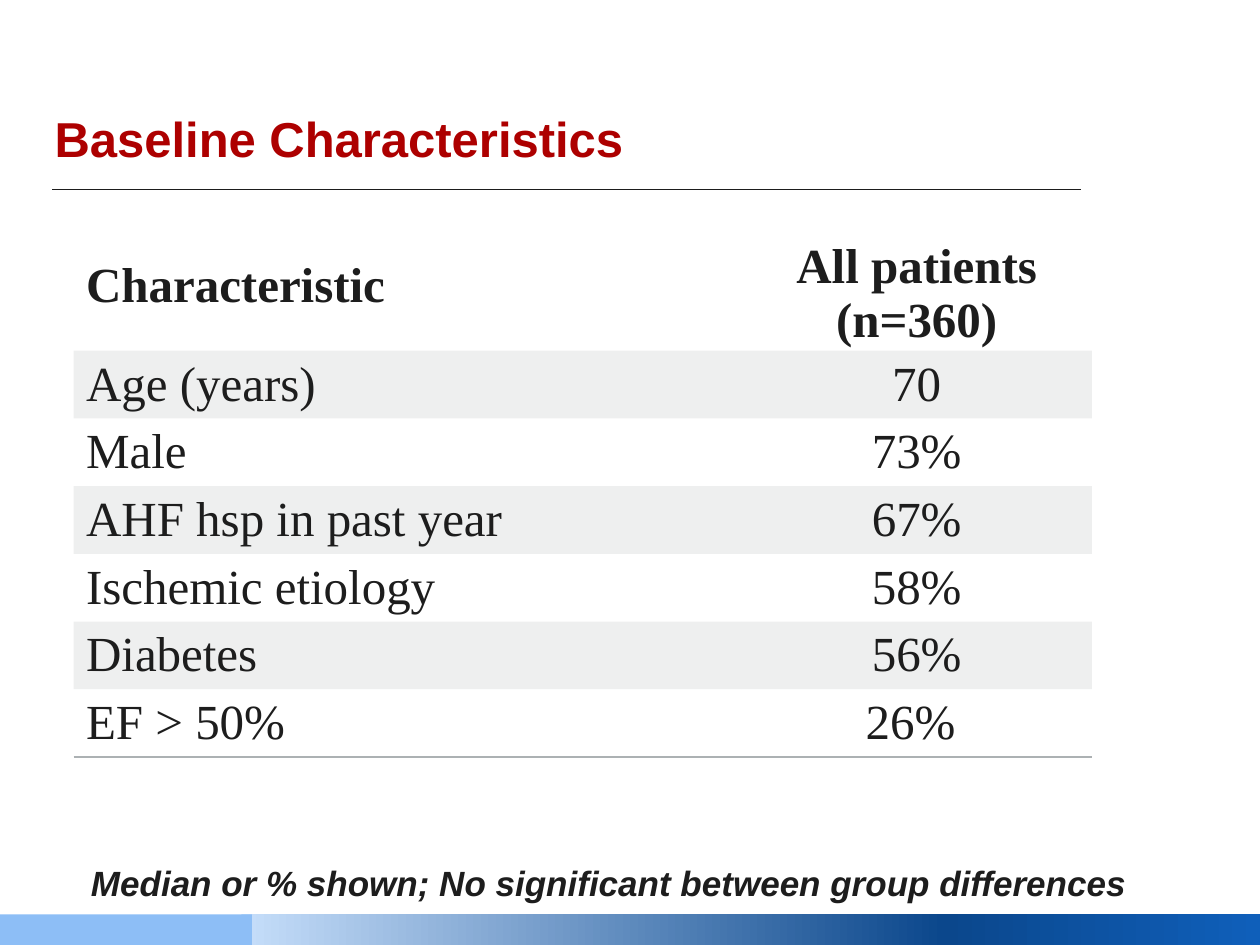
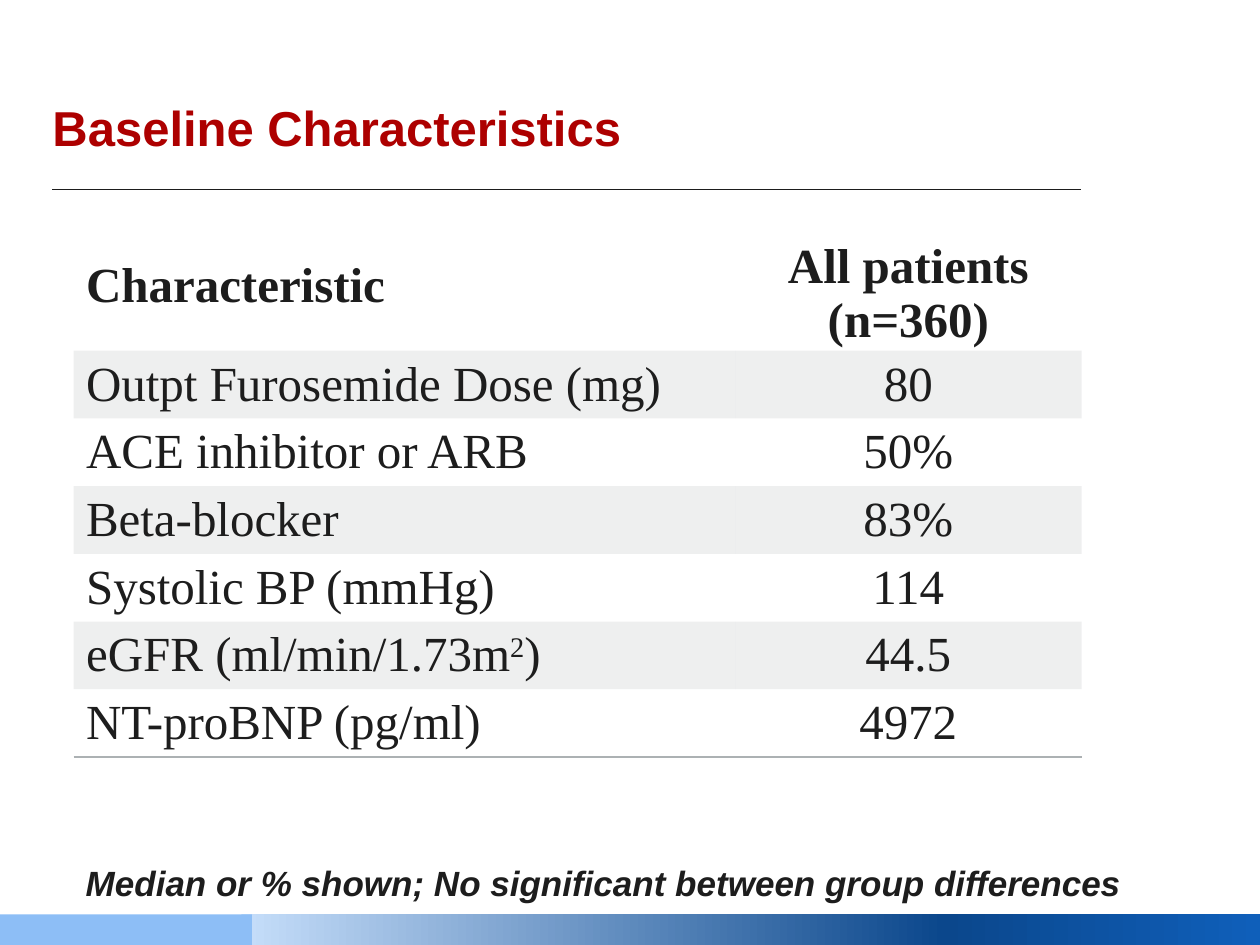
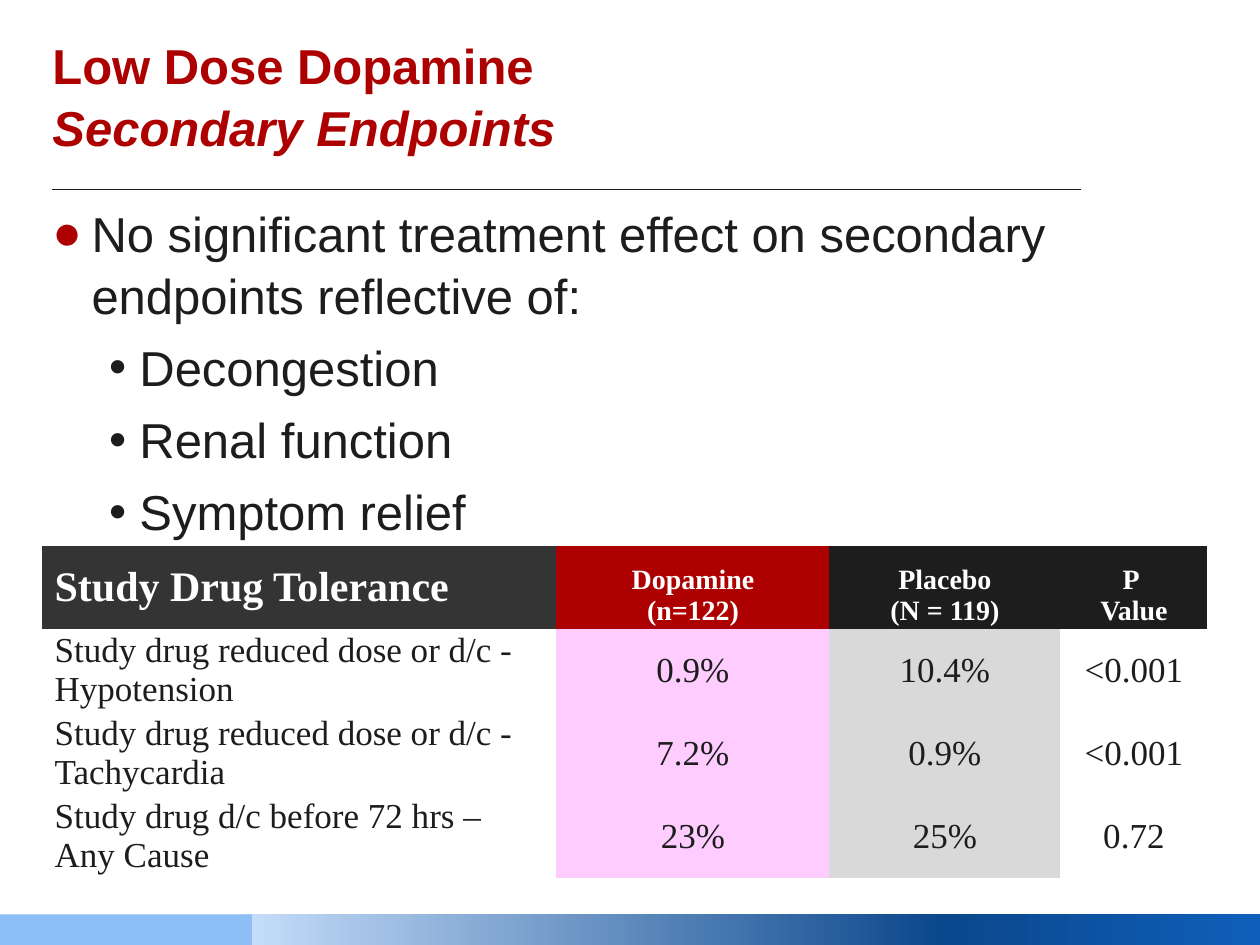
from lxml.etree import SubElement
from pptx import Presentation
from pptx.dml.color import RGBColor
from pptx.enum.shapes import MSO_CONNECTOR, MSO_SHAPE
from pptx.enum.text import MSO_ANCHOR as Anchor, MSO_AUTO_SIZE as AutoSize, PP_ALIGN as Align
from pptx.oxml.ns import qn
from pptx.util import Inches, Pt

COLUMNS, ROWS = 120, 90
UNIT = Inches(10) / COLUMNS
SANS, SERIF = "Arial", "Times New Roman"
INK, RED, WHITE, GRAY = "1D1D1D", "AD0000", "FFFFFF", "ACB1B3"
CHARCOAL, PINK, SILVER = "343434", "FFCCFF", "D9D9D9"
BAND_STOPS = [(0, "C6DEFA"), (69, "0B478C"), (100, "0F5FBA")]
BAND_LEFT = "8DBEF6"
NO_STYLE = "{2D5ABB26-0587-4C30-8999-92F81FD0307C}"
LINE_SPACING = 1.06

TITLE = dict(name=SANS, size=28, color=RED, bold=True)
BODY = dict(name=SANS, size=28, color=INK)
NOTE = dict(name=SANS, size=20, color=INK, bold=True, italic=True)
CELL = dict(name=SERIF, size=28, color=INK, bold=False)
SMALL_CELL = {**CELL, "size": 20}
HEADING = {**CELL, "bold": True}
DARK_HEADING = dict(name=SERIF, size=24, color=WHITE, bold=True)
SMALL_HEADING = {**DARK_HEADING, "size": 16}

PATIENTS = [
    ("Characteristic", "All patients\n(n=360)"),
    ("Age (years)", "70"),
    ("Male", "73%"),
    ("AHF hsp in past year", "67%"),
    ("Ischemic etiology", "58%"),
    ("Diabetes", "56%"),
    ("EF > 50%", "26% "),
]
TREATMENT = [
    ("Characteristic", "All patients\n(n=360)"),
    ("Outpt Furosemide Dose (mg)", "80"),
    ("ACE inhibitor or ARB", "50%"),
    ("Beta-blocker", "83%"),
    ("Systolic BP (mmHg)", "114"),
    ("eGFR (ml/min/1.73m^2^)", "44.5"),
    ("NT-proBNP (pg/ml)", "4972"),
]
TOLERANCE = [
    ("Study Drug Tolerance", "Dopamine\n(n=122)", "Placebo\n(N = 119)", "P \nValue"),
    ("Study drug reduced dose or d/c - Hypotension", "0.9%", "10.4%", "<0.001"),
    ("Study drug reduced dose or d/c - Tachycardia", "7.2%", "0.9%", "<0.001"),
    ("Study drug d/c before 72 hrs – Any Cause", "23%", "25%", "0.72"),
]
ENDPOINTS = [
    (0, "No significant treatment effect on secondary endpoints reflective of:"),
    (1, "Decongestion"),
    (1, "Renal function"),
    (1, "Symptom relief"),
]
BULLETS = [("●", RED, 0.31, -0.31), ("•", INK, 0.69, -0.24)]


def rgb(color):
    return RGBColor.from_string(color)


def grid(*lengths):
    return [round(length * UNIT) for length in lengths]


def place(shape, *box):
    shape.left, shape.top, shape.width, shape.height = grid(*box)


def format_font(font, values):
    for key, value in values.items():
        if key == "color":
            font.color.rgb = rgb(value)
        else:
            setattr(font, key, Pt(value) if key == "size" else value)


def add_run(paragraph, text, values):
    run = paragraph.add_run()
    run.text = text
    format_font(run.font, values)
    return run


def set_margins(target, horizontal, vertical):
    target.margin_left = target.margin_right = Inches(horizontal)
    target.margin_top = target.margin_bottom = Inches(vertical)


def add_color(parent, color):
    return SubElement(parent, qn("a:srgbClr"), val=color)


def add_band(slide, box, color=None):
    shape = slide.shapes.add_shape(MSO_SHAPE.RECTANGLE, *grid(*box))
    shape.shadow.inherit = False
    shape.line.fill.background()
    if color:
        shape.fill.solid()
        shape.fill.fore_color.rgb = rgb(color)
        return
    shape.fill.gradient()
    shape.fill.gradient_angle = 0
    stops = shape.element.spPr.find(".//" + qn("a:gsLst"))
    for stop in list(stops):
        stops.remove(stop)
    for percent, stop_color in BAND_STOPS:
        add_color(SubElement(stops, qn("a:gs"), pos=str(percent * 1000)), stop_color)


def add_rule(slide):
    rule = slide.shapes.add_connector(MSO_CONNECTOR.STRAIGHT, *grid(5, 18, 103, 18))
    rule.line.color.rgb = rgb(INK)
    rule.line.width = Pt(0.5)
    SubElement(rule.element.spPr, qn("a:effectLst"))


def add_slide(presentation, layout, title_lines, left=5, top=9):
    slide = presentation.slides.add_slide(presentation.slide_layouts.get_by_name(layout))
    add_band(slide, (23, 87.1, 97, 2.9))
    add_band(slide, (0, 87.1, 24, 2.9), BAND_LEFT)
    add_rule(slide)
    title = slide.shapes.title
    place(title, left, top, 87, 5.9)
    frame = title.text_frame
    set_margins(frame, 0, 0)
    frame.auto_size, frame.vertical_anchor = AutoSize.NONE, Anchor.BOTTOM
    paragraph = frame.paragraphs[0]
    paragraph.alignment, paragraph.line_spacing = Align.LEFT, LINE_SPACING
    for index, line in enumerate(title_lines):
        if index:
            paragraph.add_line_break()
        add_run(paragraph, line, {**TITLE, "italic": index > 0})
    return slide


def add_note(slide, left, width):
    frame = slide.shapes.add_textbox(*grid(left, 81.5, width, 5.3)).text_frame
    frame.word_wrap = True
    paragraph = frame.paragraphs[0]
    paragraph.alignment = Align.CENTER
    add_run(paragraph, "Median or % shown; No significant between group differences", NOTE)


def add_bullets(slide, items):
    body = slide.placeholders[1]
    place(body, 5, 19, 98, 39.6)
    frame = body.text_frame
    set_margins(frame, 0, 0)
    frame.auto_size = AutoSize.NONE
    for index, (level, text) in enumerate(items):
        paragraph = frame.add_paragraph() if index else frame.paragraphs[0]
        paragraph.level = level
        character, color, indent, hanging = BULLETS[level]
        properties = paragraph._p.get_or_add_pPr()
        properties.set("marL", str(Inches(indent)))
        properties.set("indent", str(Inches(hanging)))
        add_color(SubElement(properties, qn("a:buClr")), color)
        SubElement(properties, qn("a:buFont"), typeface=SANS)
        SubElement(properties, qn("a:buChar"), char=character)
        paragraph.line_spacing = LINE_SPACING
        paragraph.space_before = Pt(5.6 if index else 0)
        add_run(paragraph, text, BODY)


def fill_cell(cell, color, opacity=100):
    if not color:
        cell.fill.background()
        return
    cell.fill.solid()
    cell.fill.fore_color.rgb = rgb(color)
    if opacity < 100:
        tint = cell._tc.tcPr.find(".//" + qn("a:srgbClr"))
        SubElement(tint, qn("a:alpha"), val=str(opacity * 1000))


def add_bottom_border(cell, color):
    properties = cell._tc.get_or_add_tcPr()
    border = SubElement(properties, qn("a:lnB"), w=str(Pt(1)))
    add_color(SubElement(border, qn("a:solidFill")), color)
    properties.insert(0, border)


def write_cell(cell, text, values, alignment, anchor):
    set_margins(cell, 0.1, 0.02)
    cell.vertical_anchor = anchor
    for index, line in enumerate(text.split("\n")):
        frame = cell.text_frame
        paragraph = frame.add_paragraph() if index else frame.paragraphs[0]
        paragraph.alignment = alignment
        for part, piece in enumerate(line.split("^")):
            run = add_run(paragraph, piece, values)
            if part % 2:
                run.font._element.set("baseline", "30000")


def add_table(slide, rows, left, top, widths, heights, style):
    box = grid(left, top, sum(widths), sum(heights))
    table = slide.shapes.add_table(len(rows), len(widths), *box).table
    table.first_row = table.horz_banding = False
    table._tbl.tblPr.find(qn("a:tableStyleId")).text = NO_STYLE
    for column, width in zip(table.columns, grid(*widths)):
        column.width = width
    for row, height in zip(table.rows, grid(*heights)):
        row.height = height
    for row, texts in enumerate(rows):
        for column, text in enumerate(texts):
            values, fill = style(row, column)
            cell = table.cell(row, column)
            alignment = Align.CENTER if column else Align.LEFT
            anchor = Anchor.BOTTOM if column and not row else Anchor.MIDDLE
            write_cell(cell, text, values, alignment, anchor)
            fill_cell(cell, *fill)
    return table


def striped_style(row, column):
    return (CELL if row else HEADING), ((GRAY, 20) if row % 2 else (None,))


def tolerance_style(row, column):
    if row:
        return SMALL_CELL, ((None, PINK, SILVER, None)[column],)
    fill = (CHARCOAL, RED, INK, INK)[column]
    return (SMALL_HEADING if column else DARK_HEADING), (fill,)


def add_baseline_slide(presentation, rows, title_at, widths, note):
    slide = add_slide(presentation, "Title Only", ["Baseline Characteristics"], *title_at)
    heights = [12.4] + [6.45] * (len(rows) - 1)
    table = add_table(slide, rows, 7, 21, widths, heights, striped_style)
    for column in range(len(widths)):
        add_bottom_border(table.cell(len(rows) - 1, column), GRAY)
    add_note(slide, *note)


def add_endpoints_slide(presentation):
    lines = ["Low Dose Dopamine", "Secondary Endpoints"]
    slide = add_slide(presentation, "Title and Content", lines)
    add_bullets(slide, ENDPOINTS)
    heights = [7.9] * len(TOLERANCE)
    add_table(slide, TOLERANCE, 4, 52, (49, 26, 22, 14), heights, tolerance_style)


def main():
    presentation = Presentation()
    presentation.slide_width, presentation.slide_height = grid(COLUMNS, ROWS)
    add_baseline_slide(presentation, PATIENTS, (5.2, 10), (63.6, 33.4), (4, 108))
    add_baseline_slide(presentation, TREATMENT, (5, 9), (63, 33), (3, 109))
    add_endpoints_slide(presentation)
    presentation.save("out.pptx")


if __name__ == "__main__":
    main()
